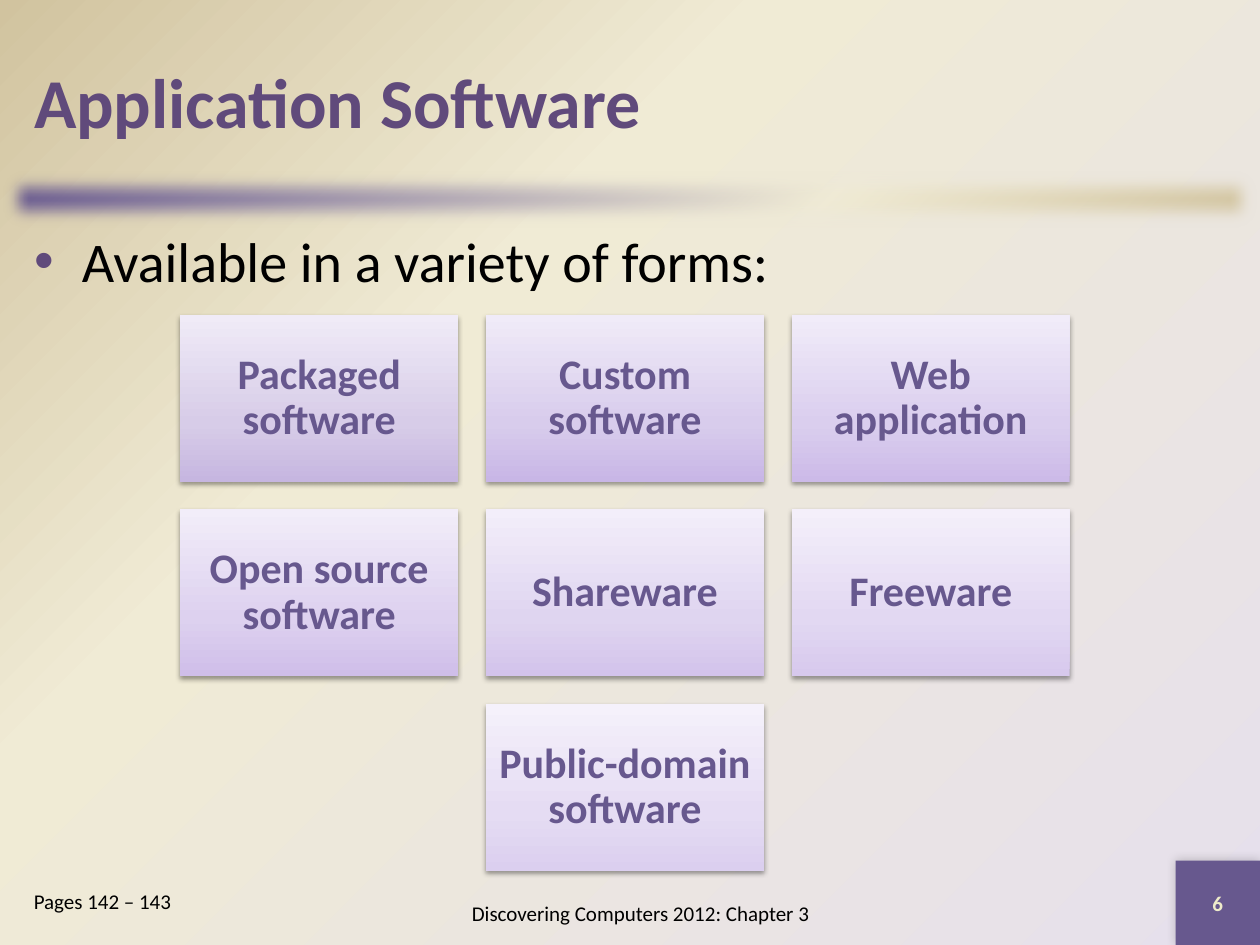
import pptx
import pptx.util
import pptx.dml.color
import pptx.enum.shapes
import pptx.enum.text
import pptx.oxml
import pptx.oxml.ns
from collections import namedtuple
from dataclasses import dataclass
from pptx.util import Inches

Box = namedtuple("Box", "left top width height")
ALIGN = pptx.enum.text.PP_ALIGN
ANCHOR = pptx.enum.text.MSO_ANCHOR
DRAWING = pptx.oxml.ns.nsdecls("a")


@dataclass(frozen=True)
class Theme:
    font: str = "Calibri"
    title: str = "604A7B"
    accent: str = "67588E"
    number: str = "EEEBCA"
    text: str = "000000"
    lavender: str = "E6E0EC"
    cream: str = "F0EBD5"
    tan: str = "D1C39F"
    title_size: int = 40
    body_size: int = 32
    card_size: int = 24
    small_size: int = 12


THEME = Theme()

# Card label with its gradient colours from bottom to top
FORMS = [
    ("Packaged software", ("C6B6E0", "D7CCE8", "F0EBF7")),
    ("Custom software", ("C8B6E6", "D8CCEC", "F0EBF8")),
    ("Web application", ("CCBAE8", "DACEEE", "F1ECF9")),
    ("Open source software", ("CFBEE9", "DDD1EF", "F2EDF9")),
    ("Shareware", ("D3C3EB", "DFD5F0", "F3EEFA")),
    ("Freeware", ("D7C9ED", "E2D8F2", "F4EFFA")),
    ("Public-domain software", ("DBCFEF", "E5DCF3", "F5F1FB")),
]


def inches(box):
    return [Inches(value) for value in box]


def place(shape, box):
    shape.left, shape.top, shape.width, shape.height = inches(box)


def write(shape, text, size, color=THEME.text, bold=False, align=ALIGN.LEFT,
          anchor=ANCHOR.TOP, inset=None, line_spacing=None):
    """Fill a shape with one formatted paragraph and return the paragraph."""
    frame = shape.text_frame
    frame.word_wrap = True
    frame.auto_size = pptx.enum.text.MSO_AUTO_SIZE.NONE
    frame.vertical_anchor = anchor
    if inset is not None:
        frame.margin_left = frame.margin_right = Inches(inset)
        frame.margin_top = frame.margin_bottom = Inches(inset)
    para = frame.paragraphs[0]
    para.alignment = align
    para.space_before = pptx.util.Pt(0)
    para.line_spacing = line_spacing
    span = para.add_run()
    span.text = text
    span.font.name = THEME.font
    span.font.size = pptx.util.Pt(size)
    span.font.bold = bold
    span.font.color.rgb = pptx.dml.color.RGBColor.from_string(color)
    return para


def paint_gradient(fill, element, stops, direction):
    """Replace the fill found inside element by a gradient."""
    fill.solid()
    solid = next(element.iter(pptx.oxml.ns.qn("a:solidFill")))
    marks = "".join(
        f'<a:gs pos="{position * 1000}"><a:srgbClr val="{color}"/></a:gs>'
        for position, color in stops)
    solid.getparent().replace(solid, pptx.oxml.parse_xml(
        f'<a:gradFill {DRAWING} rotWithShape="1"><a:gsLst>{marks}</a:gsLst>'
        f'{direction}</a:gradFill>'))


def linear(degrees):
    return f'<a:lin ang="{degrees * 60000}" scaled="0"/>'


def add_rectangle(page, box):
    shape = page.shapes.add_shape(
        pptx.enum.shapes.MSO_SHAPE.RECTANGLE, *inches(box))
    shape.line.fill.background()
    shape.shadow.inherit = False
    return shape


def add_effect(shape, markup):
    effects = shape._element.spPr.find(pptx.oxml.ns.qn("a:effectLst"))
    effects.append(pptx.oxml.parse_xml(markup))


def add_shadow(shape, opacity, blur, distance, degrees):
    add_effect(shape, (
        f'<a:outerShdw {DRAWING} blurRad="{pptx.util.Pt(blur)}" '
        f'dist="{pptx.util.Pt(distance)}" dir="{degrees * 60000}" '
        f'algn="ctr" rotWithShape="0"><a:srgbClr val="000000">'
        f'<a:alpha val="{opacity * 1000}"/></a:srgbClr></a:outerShdw>'))


def paint_background(page):
    stops = [(0, THEME.lavender), (65, THEME.cream), (100, THEME.tan)]
    corner = '<a:path path="circle"><a:fillToRect l="100000" t="100000"/></a:path>'
    paint_gradient(page.background.fill, page._element, stops, corner)


def add_divider(page, box):
    bar = add_rectangle(page, box)
    stops = [(0, THEME.accent), (65, THEME.cream), (100, THEME.tan)]
    paint_gradient(bar.fill, bar._element.spPr, stops, linear(45))
    add_effect(bar, f'<a:softEdge {DRAWING} rad="{pptx.util.Pt(10)}"/>')


def fill_title(page, box):
    title = page.shapes.title
    place(title, box)
    write(title, "Application Software", THEME.title_size, color=THEME.title,
          bold=True, anchor=ANCHOR.MIDDLE)


def fill_body(page, box):
    body = page.placeholders[1]
    place(body, box)
    para = write(body, "Available in a variety of forms:", THEME.body_size)
    properties = para._p.get_or_add_pPr()
    properties.set("marL", str(Inches(0.38)))
    properties.set("indent", str(Inches(-0.38)))
    for markup in (
            f'<a:buClr {DRAWING}><a:srgbClr val="{THEME.title}"/></a:buClr>',
            f'<a:buFont {DRAWING} typeface="Arial"/>',
            f'<a:buChar {DRAWING} char="•"/>'):
        properties.append(pptx.oxml.parse_xml(markup))


def add_card(page, box, label, colors):
    card = add_rectangle(page, box)
    paint_gradient(card.fill, card._element.spPr,
                   zip((0, 35, 100), colors), linear(270))
    add_shadow(card, 38, 3.1, 1.6, 90)
    write(card, label, THEME.card_size, color=THEME.accent, bold=True,
          align=ALIGN.CENTER, anchor=ANCHOR.MIDDLE, inset=0.1, line_spacing=0.9)


def add_card_grid(page, box, columns=3, gap=0.22):
    """Lay the cards out in rows, with a short last row centred."""
    rows = [FORMS[start:start + columns]
            for start in range(0, len(FORMS), columns)]
    width = (box.width - gap * (columns - 1)) / columns
    height = (box.height - gap * (len(rows) - 1)) / len(rows)
    for row_number, row in enumerate(rows):
        left = box.left + (columns - len(row)) * (width + gap) / 2
        top = box.top + row_number * (height + gap)
        for column, (label, colors) in enumerate(row):
            card_box = Box(left + column * (width + gap), top, width, height)
            add_card(page, card_box, label, colors)


def add_footer(page, box):
    pages = page.shapes.add_textbox(
        *inches(Box(box.left + 0.17, box.top + 0.17, 1.83, 0.5)))
    write(pages, "Pages 142 – 143", THEME.small_size)
    source = page.shapes.add_textbox(
        *inches(Box(box.left + 3, box.top + 0.17, 4.17, 0.5)))
    write(source, "Discovering Computers 2012: Chapter 3", THEME.small_size,
          align=ALIGN.CENTER, anchor=ANCHOR.MIDDLE)
    side = box.height
    number = add_rectangle(
        page, Box(box.left + box.width - side, box.top, side, side))
    number.fill.solid()
    number.fill.fore_color.rgb = pptx.dml.color.RGBColor.from_string(THEME.accent)
    add_shadow(number, 20, 6, 0, 225)
    write(number, "6", THEME.small_size, color=THEME.number, bold=True,
          align=ALIGN.CENTER, anchor=ANCHOR.MIDDLE)


def main():
    deck = pptx.Presentation()
    deck.slide_width, deck.slide_height = Inches(10), Inches(7.5)
    page = deck.slides.add_slide(deck.slide_layouts[1])
    paint_background(page)
    add_divider(page, Box(0, 1.33, 10, 0.5))
    fill_title(page, Box(0.17, 0.17, 9.67, 1.25))
    fill_body(page, Box(0.17, 1.75, 9.67, 5.08))
    add_card_grid(page, Box(1.43, 2.5, 7.06, 4.41))
    add_footer(page, Box(0, 6.83, 10, 0.67))
    deck.save("out.pptx")


if __name__ == "__main__":
    main()
